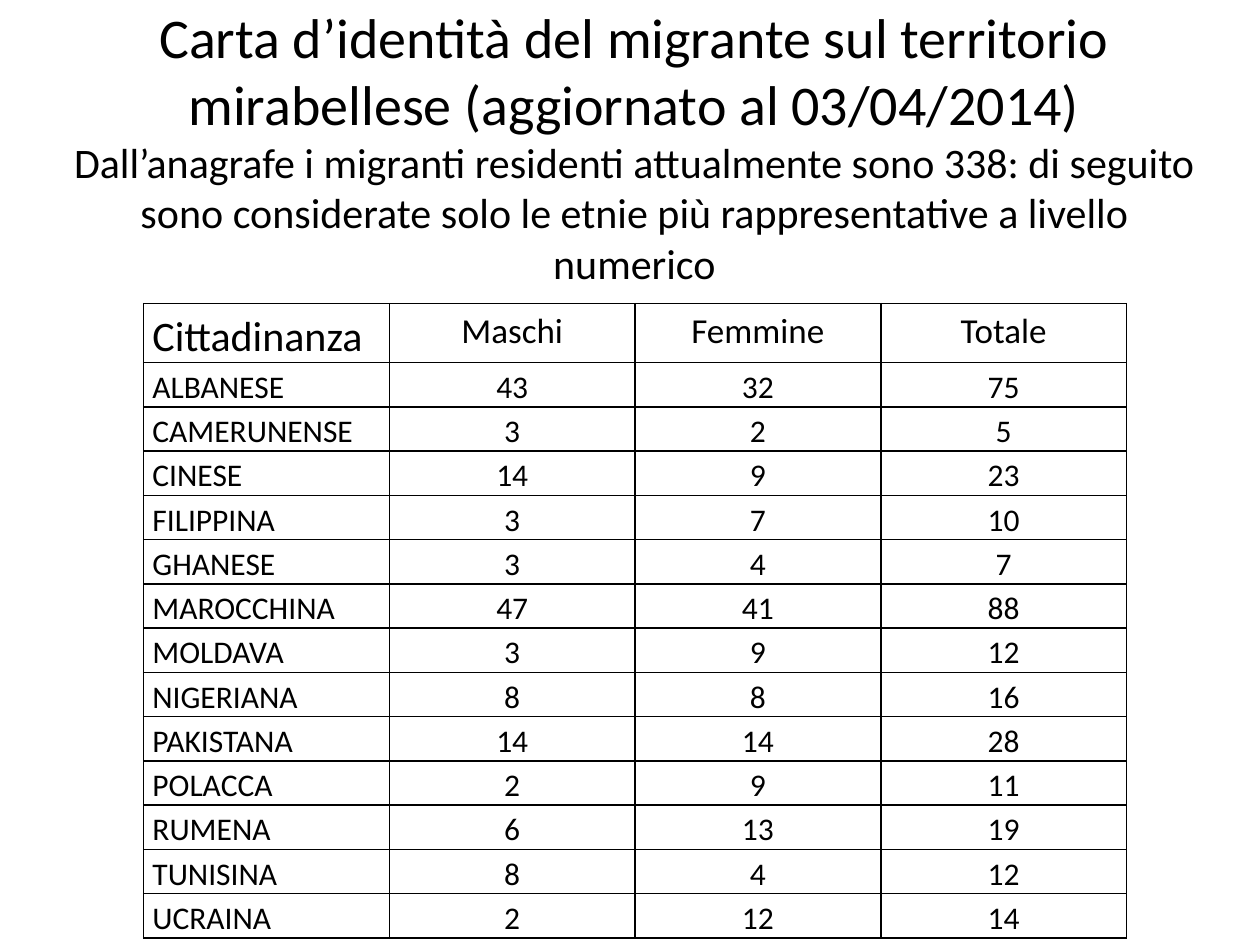
from dataclasses import dataclass

from lxml.etree import SubElement
from pptx import Presentation
from pptx.dml.color import RGBColor
from pptx.enum.text import MSO_ANCHOR, MSO_AUTO_SIZE, PP_ALIGN
from pptx.oxml.ns import qn
from pptx.slide import Slide
from pptx.table import _Cell
from pptx.text.text import Font
from pptx.util import Inches, Pt

BLACK = RGBColor(0x00, 0x00, 0x00)
FONT_NAME = "Calibri"
SLIDE_WIDTH, SLIDE_HEIGHT = Inches(10), Inches(7.5)
COLUMN_WIDTH = Inches(1.95)
HEADER_HEIGHT, ROW_HEIGHT = Inches(0.4), Inches(0.31)
TABLE_TOP, TABLE_HEIGHT = Inches(2.41), Inches(4.94)
HEADING = "Carta d’identità del migrante sul territorio mirabellese (aggiornato al 03/04/2014)"
SUBHEADING = (
    "Dall’anagrafe i migranti residenti attualmente sono 338: di seguito sono "
    "considerate solo le etnie più rappresentative a livello numerico"
)


@dataclass(frozen=True)
class Citizenship:
    name: str
    males: int
    females: int

    def texts(self) -> list[str]:
        return [self.name, str(self.males), str(self.females), str(self.males + self.females)]


HEADERS = ["Cittadinanza", "Maschi", "Femmine", "Totale"]
CITIZENSHIPS = [
    Citizenship("ALBANESE", 43, 32),
    Citizenship("CAMERUNENSE", 3, 2),
    Citizenship("CINESE", 14, 9),
    Citizenship("FILIPPINA", 3, 7),
    Citizenship("GHANESE", 3, 4),
    Citizenship("MAROCCHINA", 47, 41),
    Citizenship("MOLDAVA", 3, 9),
    Citizenship("NIGERIANA", 8, 8),
    Citizenship("PAKISTANA", 14, 14),
    Citizenship("POLACCA", 2, 9),
    Citizenship("RUMENA", 6, 13),
    Citizenship("TUNISINA", 8, 4),
    Citizenship("UCRAINA", 2, 12),
]


def style_font(font: Font, size: int) -> None:
    font.name = FONT_NAME
    font.size = Pt(size)
    font.color.rgb = BLACK


def draw_title(page: Slide) -> None:
    box = page.shapes.title
    box.left, box.top = Inches(0.35), Inches(0.36)
    box.width, box.height = Inches(9.37), Inches(1.89)
    frame = box.text_frame
    frame.text = f"{HEADING}\v{SUBHEADING}"
    frame.word_wrap = True
    frame.auto_size = MSO_AUTO_SIZE.NONE
    frame.vertical_anchor = MSO_ANCHOR.MIDDLE
    frame.margin_bottom = Inches(0.36)
    para = frame.paragraphs[0]
    para.alignment = PP_ALIGN.CENTER
    for span, size in zip(para.runs, (32, 24)):
        style_font(span.font, size)


def draw_borders(cell: _Cell) -> None:
    properties = cell._tc.get_or_add_tcPr()
    for position, side in enumerate(("a:lnL", "a:lnR", "a:lnT", "a:lnB")):
        line = properties.makeelement(qn(side), {"w": str(Pt(1))})
        fill = SubElement(line, qn("a:solidFill"))
        SubElement(fill, qn("a:srgbClr"), val=str(BLACK))
        properties.insert(position, line)


def draw_cell(cell: _Cell, text: str, size: int, alignment: PP_ALIGN) -> None:
    cell.fill.background()
    cell.margin_left = cell.margin_right = Inches(0.07)
    cell.margin_top = cell.margin_bottom = 0
    cell.vertical_anchor = MSO_ANCHOR.TOP
    cell.text_frame.text = text
    para = cell.text_frame.paragraphs[0]
    para.alignment = alignment
    para.line_spacing = 1.15
    style_font(para.runs[0].font, size)
    draw_borders(cell)


def draw_table(page: Slide) -> None:
    rows = [HEADERS] + [citizenship.texts() for citizenship in CITIZENSHIPS]
    width = COLUMN_WIDTH * len(HEADERS)
    box = page.shapes.add_table(
        len(rows), len(HEADERS), Inches(1.14), TABLE_TOP, width, TABLE_HEIGHT
    )
    table = box.table
    table.first_row = table.horz_banding = False
    for column in table.columns:
        column.width = COLUMN_WIDTH
    for row_index, texts in enumerate(rows):
        is_header = row_index == 0
        table.rows[row_index].height = HEADER_HEIGHT if is_header else ROW_HEIGHT
        for column_index, text in enumerate(texts):
            is_name = column_index == 0
            size = (24 if is_name else 20) if is_header else 18
            alignment = PP_ALIGN.LEFT if is_name else PP_ALIGN.CENTER
            draw_cell(table.cell(row_index, column_index), text, size, alignment)
    box.height = TABLE_HEIGHT


def main() -> None:
    deck = Presentation()
    deck.slide_width, deck.slide_height = SLIDE_WIDTH, SLIDE_HEIGHT
    page = deck.slides.add_slide(deck.slide_layouts[5])
    draw_title(page)
    draw_table(page)
    deck.save("out.pptx")


if __name__ == "__main__":
    main()
